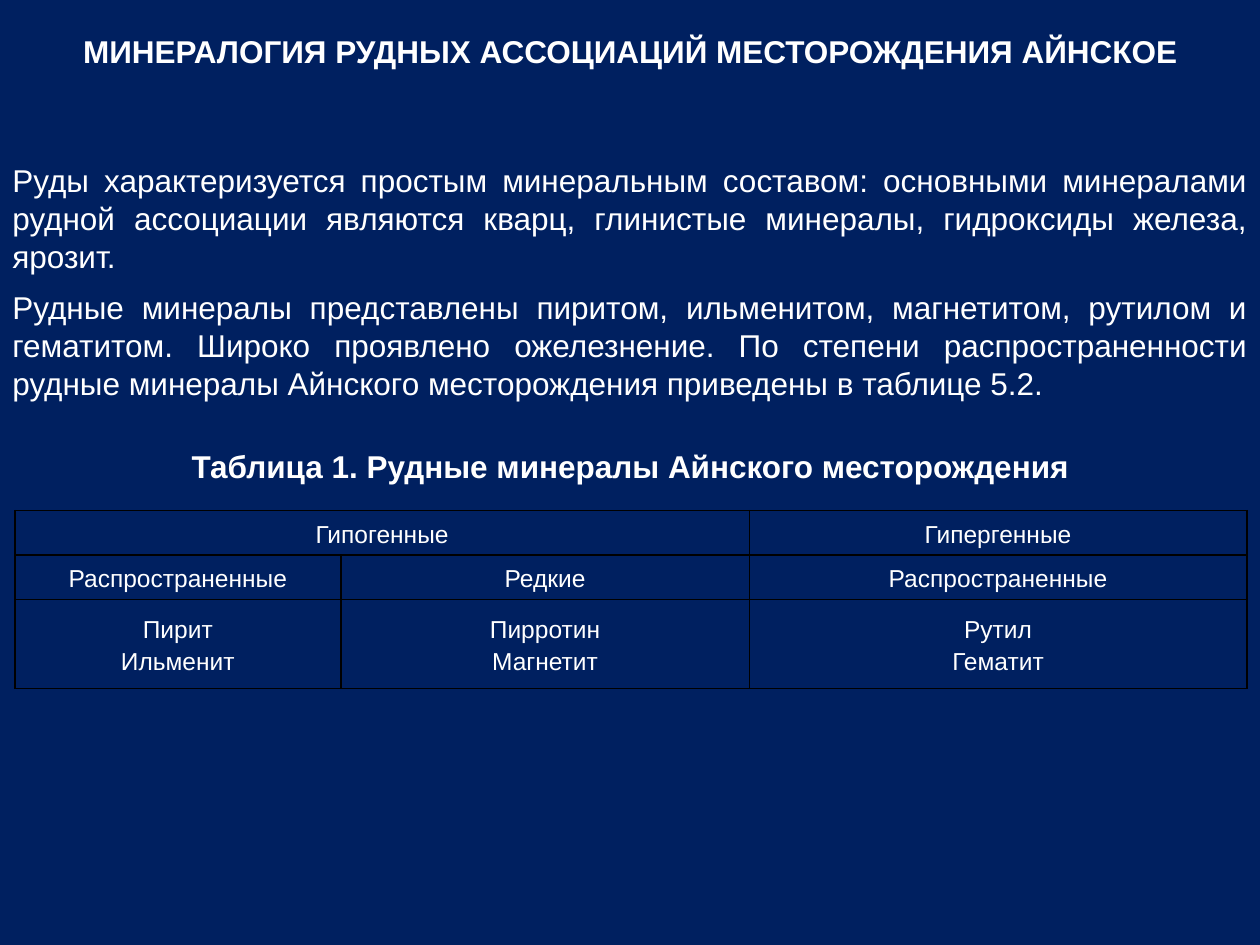
from lxml.etree import SubElement
from pptx import Presentation
from pptx.dml.color import RGBColor
from pptx.enum.text import MSO_ANCHOR as Anchor, MSO_AUTO_SIZE as AutoSize, PP_ALIGN as Align
from pptx.oxml.ns import qn
from pptx.util import Pt

COLORS = {"navy": "002060", "white": "FFFFFF", "black": "000000"}
SLIDE_W, SLIDE_H = 720, 540

TITLE = "МИНЕРАЛОГИЯ РУДНЫХ АССОЦИАЦИЙ МЕСТОРОЖДЕНИЯ АЙНСКОЕ"
COMPOSITION = (
    "Руды характеризуется простым минеральным составом: основными минералами "
    "рудной ассоциации являются кварц, глинистые минералы, гидроксиды железа, ярозит."
)
ORE_MINERALS = (
    "Рудные минералы представлены пиритом, ильменитом, магнетитом, рутилом и гематитом. "
    "Широко проявлено ожелезнение. По степени распространенности рудные минералы "
    "Айнского месторождения приведены в таблице 5.2."
)
CAPTION = "Таблица 1. Рудные минералы Айнского месторождения"

# Each cell is a list of lines; None is covered by the merged cell on its left
MINERALS = [
    [["Гипогенные"], None, ["Гипергенные"]],
    [["Распространенные"], ["Редкие"], ["Распространенные"]],
    [["Пирит", "Ильменит"], ["Пирротин", "Магнетит"], ["Рутил", "Гематит"]],
]
COLUMN_WIDTHS = [186.3, 233.4, 284.3]
ROW_HEIGHTS = [25.4, 25.4, 51]

CELL_FORMAT = {
    "vertical_anchor": Anchor.MIDDLE,
    "margin_left": Pt(5.1),
    "margin_right": Pt(5.1),
    "margin_top": 0,
    "margin_bottom": 0,
}


def rgb(name):
    return RGBColor.from_string(COLORS[name])


def apply_format(target, values):
    for name, value in values.items():
        setattr(target, name, value)


def write_line(paragraph, text, size, align, bold=False):
    paragraph.alignment = align
    run = paragraph.add_run()
    run.text = text
    apply_format(run.font, {"name": "Arial", "size": Pt(size), "bold": bold})
    run.font.color.rgb = rgb("white")


def add_text(slide, box, text, align, bold=False):
    frame = slide.shapes.add_textbox(*map(Pt, box)).text_frame
    apply_format(frame, {"word_wrap": True, "auto_size": AutoSize.SHAPE_TO_FIT_TEXT})
    write_line(frame.paragraphs[0], text, 18, align, bold)


def add_borders(cell):
    properties = cell._tc.get_or_add_tcPr()
    for side in ("a:lnL", "a:lnR", "a:lnT", "a:lnB"):
        line = SubElement(properties, qn(side), w=str(Pt(1)))
        fill = SubElement(line, qn("a:solidFill"))
        SubElement(fill, qn("a:srgbClr"), val=COLORS["black"])


def fill_cell(cell, lines):
    apply_format(cell, CELL_FORMAT)
    frame = cell.text_frame
    for index, text in enumerate(lines):
        paragraph = frame.add_paragraph() if index else frame.paragraphs[0]
        write_line(paragraph, text, 14, Align.CENTER)
        paragraph.line_spacing = 1.15
        paragraph.space_after = Pt(10 if len(lines) == 1 else 0)


def add_minerals_table(slide, box):
    table = slide.shapes.add_table(len(MINERALS), len(COLUMN_WIDTHS), *map(Pt, box)).table
    apply_format(table, {"first_row": False, "horz_banding": False})
    for column, width in zip(table.columns, COLUMN_WIDTHS):
        column.width = Pt(width)
    for row, height in zip(table.rows, ROW_HEIGHTS):
        row.height = Pt(height)
    table.cell(0, 0).merge(table.cell(0, 1))
    for row, contents in zip(table.rows, MINERALS):
        for cell, lines in zip(row.cells, contents):
            add_borders(cell)
            cell.fill.solid()
            cell.fill.fore_color.rgb = rgb("navy")
            if lines:
                fill_cell(cell, lines)


def add_description(slide, box):
    # Two justified paragraphs, one box each, stacked without a gap
    left, top, width, height = box
    part = height / 2
    for index, text in enumerate((COMPOSITION, ORE_MINERALS)):
        add_text(slide, (left, top + index * part, width, part), text, Align.JUSTIFY)


def add_heading(slide, box, text):
    add_text(slide, box, text, Align.CENTER, bold=True)


def main():
    deck = Presentation()
    deck.slide_width, deck.slide_height = Pt(SLIDE_W), Pt(SLIDE_H)
    slide = deck.slides.add_slide(deck.slide_layouts[6])
    background = slide.background.fill
    background.solid()
    background.fore_color.rgb = rgb("navy")

    add_heading(slide, (0.5, 14.6, 719.5, 29), TITLE)
    add_description(slide, (0, 88.6, SLIDE_W, 145.4))
    add_heading(slide, (0.5, 252, 719.5, 29), CAPTION)
    add_minerals_table(slide, (8.5, 291.7, sum(COLUMN_WIDTHS), sum(ROW_HEIGHTS)))
    deck.save("out.pptx")


if __name__ == "__main__":
    main()
